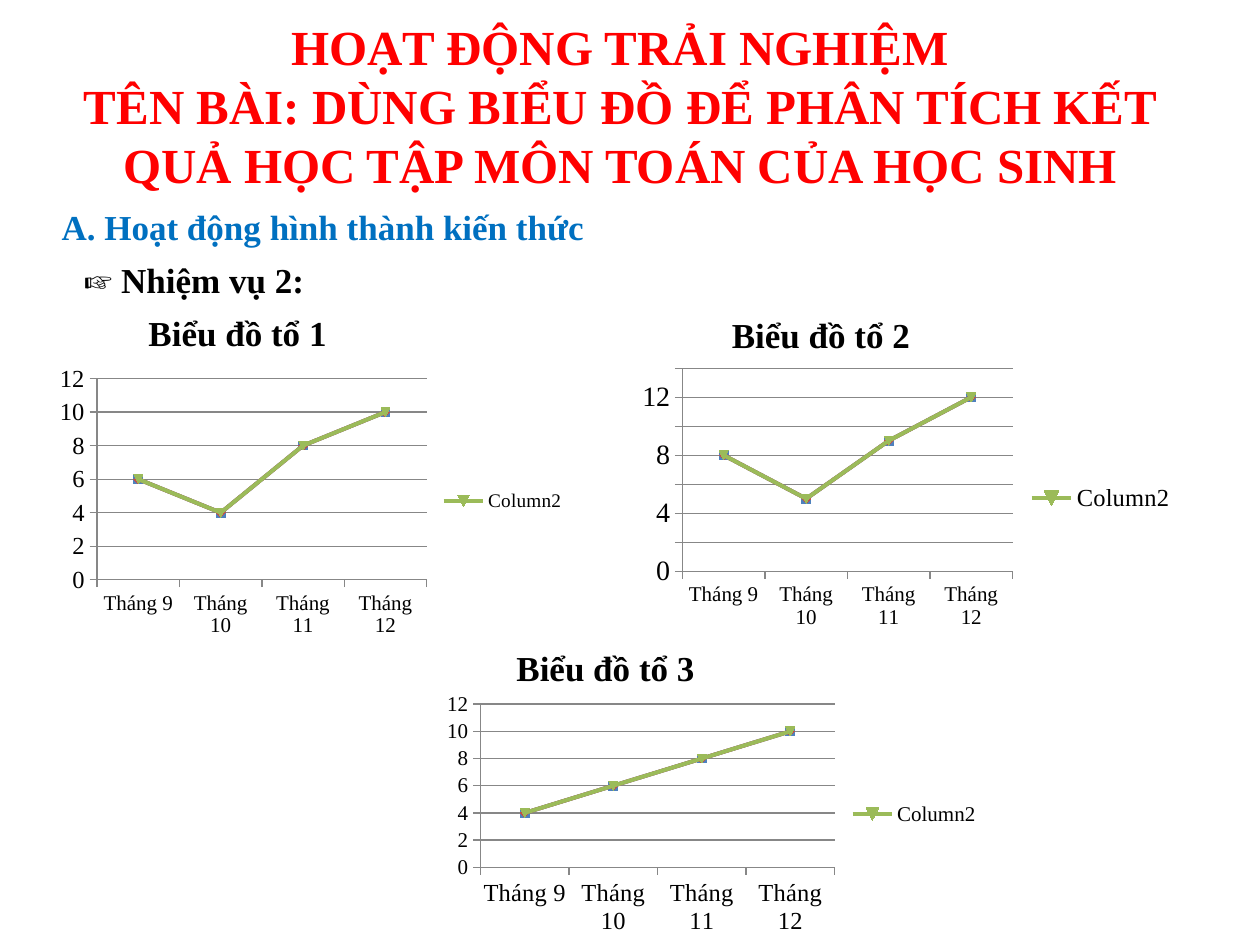
from lxml import etree
from pptx import Presentation
from pptx.chart.data import CategoryChartData
from pptx.dml.color import RGBColor
from pptx.enum.chart import XL_CHART_TYPE, XL_LEGEND_POSITION, XL_TICK_MARK
from pptx.enum.text import MSO_ANCHOR, MSO_AUTO_SIZE, PP_ALIGN
from pptx.oxml.ns import qn
from pptx.util import Inches, Pt

RED = RGBColor(0xFF, 0x00, 0x00)
BLUE = RGBColor(0x00, 0x70, 0xC0)
BLACK = RGBColor(0x00, 0x00, 0x00)
GRAY = RGBColor(0x87, 0x87, 0x87)
TINTS = [RGBColor(0x4F, 0x81, 0xBD), RGBColor(0xC0, 0x50, 0x4D),
         RGBColor(0x9B, 0xBB, 0x59)]
LINE = XL_CHART_TYPE.LINE_MARKERS_STACKED
RIGHT = XL_LEGEND_POSITION.RIGHT
OUT, NONE = XL_TICK_MARK.OUTSIDE, XL_TICK_MARK.NONE
TOP, CENTER, LEFT = MSO_ANCHOR.TOP, PP_ALIGN.CENTER, PP_ALIGN.LEFT
GROW = MSO_AUTO_SIZE.SHAPE_TO_FIT_TEXT
MONTHS = ["Tháng 9", "Tháng 10", "Tháng 11", "Tháng 12"]


class Page:
    """Style and slide; lengths are columns and rows of a 100 x 75 grid."""
    face = "Times New Roman"
    cols, rows = 100, 75

    def __init__(self, deck):
        self.wide = deck.slide_width / self.cols
        self.high = deck.slide_height / self.rows
        self.slide = deck.slides.add_slide(deck.slide_layouts[5])

    def place(self, col, row, wide, high):
        return (round(col * self.wide), round(row * self.high),
                round(wide * self.wide), round(high * self.high))

    def font(self, font, size, color=BLACK, bold=False):
        font.name, font.size, font.bold = self.face, Pt(size), bold
        font.color.rgb = color

    def fill(self, shape, lines, size, color, align=LEFT):
        frame = shape.text_frame
        frame.text = "\n".join(lines)
        frame.word_wrap, frame.auto_size = True, GROW
        frame.vertical_anchor = TOP
        for para in frame.paragraphs:
            para.alignment = align
            self.font(para.font, size, color, True)

    def title(self, box, lines):
        shape = self.slide.shapes.title
        shape.left, shape.top, shape.width, shape.height = self.place(*box)
        self.fill(shape, lines, 28, RED, CENTER)

    def text(self, box, line, color=BLACK):
        shape = self.slide.shapes.add_textbox(*self.place(*box))
        self.fill(shape, [line], 20, color)

    def axis(self, axis, size):
        axis.major_tick_mark, axis.minor_tick_mark = OUT, NONE
        axis.format.line.color.rgb = GRAY
        self.font(axis.tick_labels.font, size)

    def chart(self, box, marks, sizes, top=None):
        data = CategoryChartData()
        data.categories = MONTHS
        blank = [None] * len(MONTHS)
        data.add_series("Series 1", marks)
        data.add_series("Series 2", blank)
        data.add_series("Column2", blank)
        chart = self.slide.shapes.add_chart(LINE, *self.place(*box), data).chart
        chart.has_title = False
        chart.font.name, chart.font.size = "Calibri", Pt(10)
        chart.font.color.rgb = BLACK
        plot = chart.plots[0]
        plot.vary_by_categories = False
        for line, tint in zip(plot.series, TINTS):
            line.smooth = False
            line.format.line.color.rgb = tint
            line.format.line.width = Pt(2.25)

        # Axes and grid lines
        months, scale, key = sizes
        self.axis(chart.category_axis, months)
        axis = chart.value_axis
        self.axis(axis, scale)
        axis.has_major_gridlines = True
        axis.major_gridlines.format.line.color.rgb = GRAY
        if top:
            axis.maximum_scale, axis.major_unit = top, 2

        # The key names only the last line
        chart.has_legend = True
        chart.legend.position = RIGHT
        chart.legend.include_in_layout = False
        self.font(chart.legend.font, key)
        spot = chart.element.find(".//" + qn("c:legendPos"))
        for index in (1, 0):
            entry = etree.Element(qn("c:legendEntry"))
            etree.SubElement(entry, qn("c:idx")).set("val", str(index))
            etree.SubElement(entry, qn("c:delete")).set("val", "1")
            spot.addnext(entry)

        # Blank values add zero to the stack
        for node in chart.element.iter(qn("c:dispBlanksAs")):
            node.set("val", "zero")


def main():
    deck = Presentation()
    deck.slide_width, deck.slide_height = Inches(10), Inches(7.5)
    page = Page(deck)

    # Headings
    page.title((4.2, 0.8, 90, 15.1), [
        "HOẠT ĐỘNG TRẢI NGHIỆM",
        "TÊN BÀI: DÙNG BIỂU ĐỒ ĐỂ PHÂN TÍCH KẾT QUẢ HỌC TẬP MÔN TOÁN CỦA HỌC SINH"])
    page.text((3.9, 15.8, 68.3, 4.4), "A. Hoạt động hình thành kiến thức", BLUE)
    page.text((5.7, 20, 35.8, 4.4), "☞ Nhiệm vụ 2:")

    # One chart per group: label spot, box, values, font sizes, top of scale
    groups = [
        ((10.8, 24.2), (3.9, 28.5, 42, 22.5), (6, 4, 8, 10), (12, 14, 11), None),
        ((57.1, 24.4), (50.1, 28.8, 44.2, 21.5), (8, 5, 9, 12), (12, 16, 14), 14),
        ((40, 50.8), (34.6, 54.6, 44.2, 20), (4, 6, 8, 10), (14, 12, 12), None)]
    for count, (spot, box, marks, sizes, top) in enumerate(groups, 1):
        page.chart(box, marks, sizes, top)
        page.text((*spot, 23.8, 4.4), f"Biểu đồ tổ {count}")

    deck.save("out.pptx")


if __name__ == "__main__":
    main()
